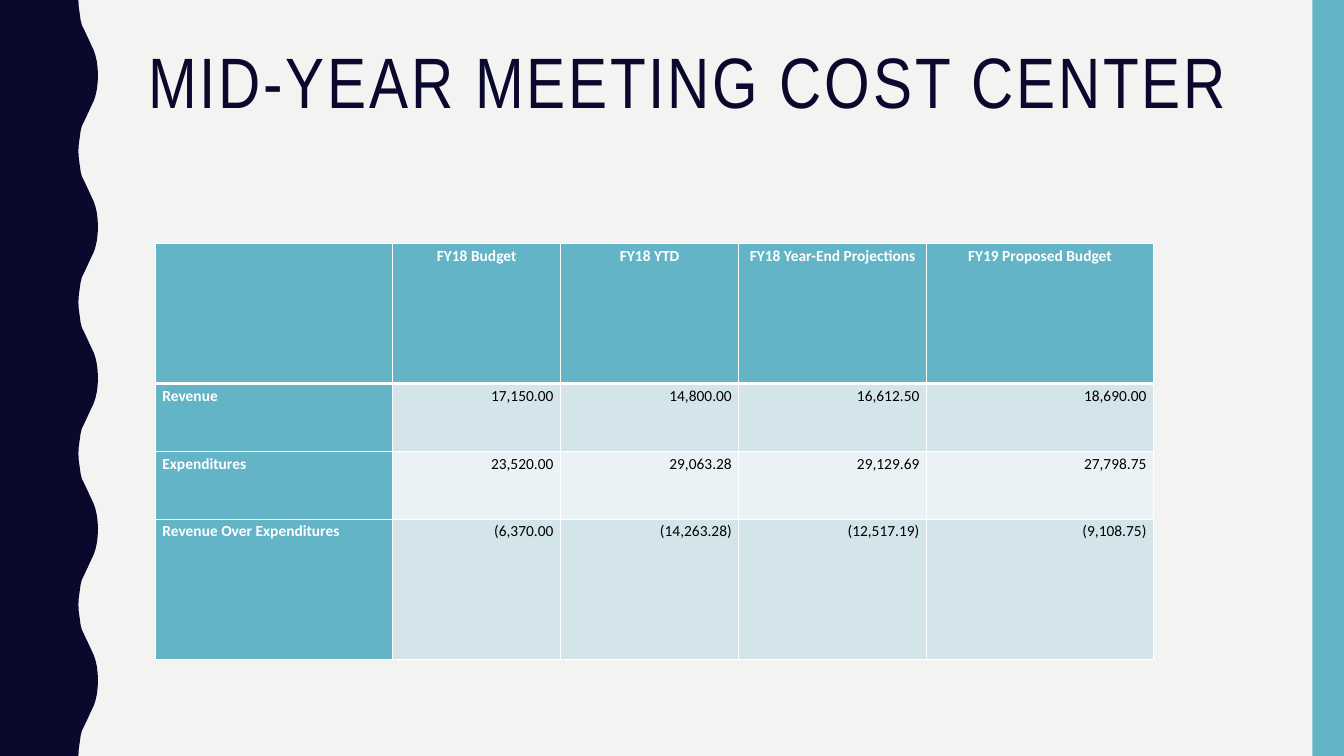
"""Build the mid-year meeting cost center slide with its budget table."""
import dataclasses

import lxml.etree
import pptx
import pptx.dml.color
import pptx.enum.shapes
import pptx.enum.text
import pptx.oxml.ns
import pptx.util

Pt = pptx.util.Pt
Color = pptx.dml.color.RGBColor.from_string
Align = pptx.enum.text.PP_ALIGN


@dataclasses.dataclass(frozen=True)
class Theme:
    paper: str = "F3F3F2"
    navy: str = "0B082E"
    teal: str = "62B4C6"
    band_dark: str = "D3E5EA"
    band_light: str = "EAF2F5"
    white: str = "FFFFFF"
    black: str = "000000"
    title_size: int = 51
    table_size: int = 11
    title_font: str = "Arial Narrow"
    table_font: str = "Calibri"


theme = Theme()


def write(frame, text, *, font, size, color, bold=False, align=Align.LEFT, line=1.0, tracking=0):
    para = frame.paragraphs[0]
    para.alignment = align
    para.line_spacing = line
    span = para.add_run()
    span.text = text
    span.font.name = font
    span.font.size = Pt(size)
    span.font.bold = bold
    span.font.color.rgb = Color(color)
    if tracking:
        span.font._element.set("spc", str(tracking * 100))


def paint(shape, color):
    shape.shadow.inherit = False
    shape.fill.solid()
    shape.fill.fore_color.rgb = Color(color)
    shape.line.fill.background()


deck = pptx.Presentation()
deck.slide_width, deck.slide_height = Pt(960), Pt(540)
page = deck.slides.add_slide(deck.slide_layouts.get_by_name("Title Only"))
page.background.fill.solid()
page.background.fill.fore_color.rgb = Color(theme.paper)

wave_height = 108
rising = [(56, 0), (56.3, 5), (57, 10), (57.6, 14.4), (58.5, 18), (60, 21), (61.4, 24),
          (62.8, 27), (64.2, 30), (65.6, 33), (67, 36), (68.2, 39.6), (69.2, 44),
          (69.8, 49), (70, 54)]
falling = [(x, wave_height - y) for x, y in reversed(rising[:-1])]
edge = [(Pt(x), Pt(y + wave * wave_height)) for wave in range(5) for x, y in rising + falling]
builder = page.shapes.build_freeform(0, 0)
builder.add_line_segments(edge + [(0, Pt(540))], close=True)
paint(builder.convert_to_shape(), theme.navy)

stripe = page.shapes.add_shape(
    pptx.enum.shapes.MSO_SHAPE.RECTANGLE, Pt(937.5), 0, Pt(22.5), Pt(540))
paint(stripe, theme.teal)

title = page.shapes.title
title.left, title.top, title.width, title.height = Pt(98.6), Pt(30), Pt(801.4), Pt(117.4)
title.text_frame.word_wrap = True
title.text_frame.auto_size = pptx.enum.text.MSO_AUTO_SIZE.NONE
title.text_frame.vertical_anchor = pptx.enum.text.MSO_ANCHOR.TOP
write(title.text_frame, "MID-YEAR MEETING COST CENTER", font=theme.title_font,
      size=theme.title_size, color=theme.navy, line=0.9, tracking=2)

budget = [
    ["", "FY18 Budget", "FY18 YTD", "FY18 Year-End Projections", "FY19 Proposed Budget"],
    ["Revenue", "17,150.00", "14,800.00", "16,612.50", "18,690.00"],
    ["Expenditures", "23,520.00", "29,063.28", "29,129.69", "27,798.75"],
    ["Revenue Over Expenditures", "(6,370.00", "(14,263.28)", "(12,517.19)", "(9,108.75)"],
]
widths = [169.6, 119.8, 127.4, 134, 162.2]
heights = [100, 48.5, 48.5, 100]
table = page.shapes.add_table(len(heights), len(widths), Pt(111), Pt(174),
                              Pt(sum(widths)), Pt(sum(heights))).table
table.first_row = table.horz_banding = False
for column, width in zip(table.columns, widths):
    column.width = Pt(width)
for row, height in zip(table.rows, heights):
    row.height = Pt(height)

for row_index, texts in enumerate(budget):
    for column_index, text in enumerate(texts):
        cell = table.cell(row_index, column_index)
        cell.margin_left = cell.margin_right = Pt(5)
        cell.margin_top = cell.margin_bottom = 0
        heading = row_index == 0 or column_index == 0
        thick_side = {0: "lnB", 1: "lnT"}.get(row_index)
        for side in ("lnL", "lnR", "lnT", "lnB"):
            border = lxml.etree.SubElement(
                cell._tc.get_or_add_tcPr(), pptx.oxml.ns.qn(f"a:{side}"),
                w=str(Pt(3 if side == thick_side else 1)))
            solid = lxml.etree.SubElement(border, pptx.oxml.ns.qn("a:solidFill"))
            lxml.etree.SubElement(solid, pptx.oxml.ns.qn("a:srgbClr"), val=theme.white)
        band = theme.band_dark if row_index % 2 else theme.band_light
        cell.fill.solid()
        cell.fill.fore_color.rgb = Color(theme.teal if heading else band)
        if text:
            body_align = Align.LEFT if column_index == 0 else Align.RIGHT
            write(cell.text_frame, text, font=theme.table_font, size=theme.table_size,
                  color=theme.white if heading else theme.black, bold=heading,
                  align=Align.CENTER if row_index == 0 else body_align, line=1.15)

deck.save("out.pptx")
